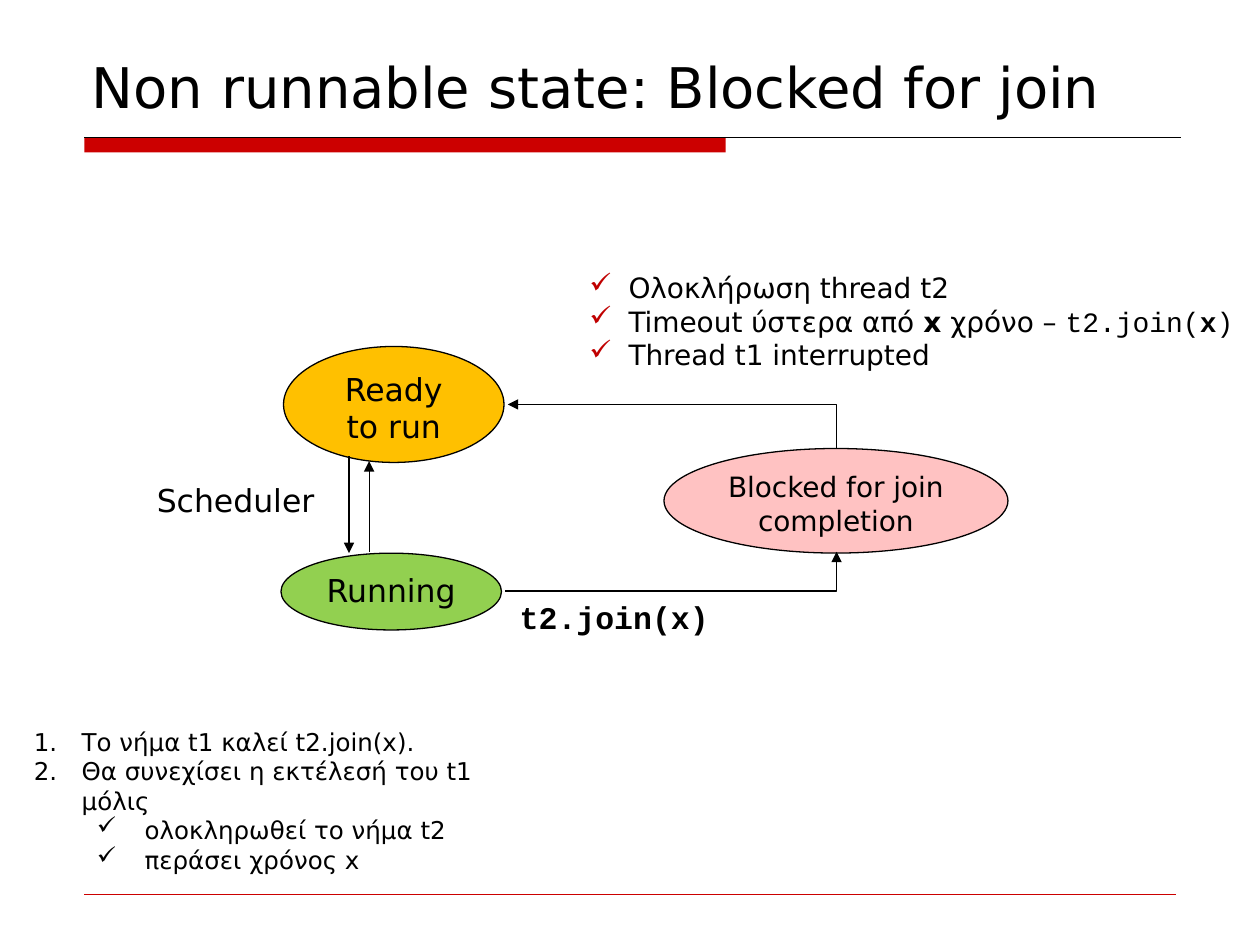
import pptx
import pptx.dml.color
import pptx.enum.shapes
import pptx.enum.text
import pptx.oxml
import pptx.oxml.ns
import pptx.util
from dataclasses import dataclass, field
from typing import Any

Inches = pptx.util.Inches
Pt = pptx.util.Pt
Align = pptx.enum.text.PP_ALIGN
Anchor = pptx.enum.text.MSO_ANCHOR
Kind = pptx.enum.shapes.MSO_SHAPE
Link = pptx.enum.shapes.MSO_CONNECTOR
SANS, MONO = "DejaVu Sans", "Courier New"
BLACK, RED = "000000", "CC0000"
CHECK = '<a:buChar {} char="✓"/>'
COUNT = '<a:buAutoNum {} type="arabicPeriod"/>'
TINT = '<a:buClr {}><a:srgbClr val="C00000"/></a:buClr>'


@dataclass
class Run:
    text: str
    look: dict[str, Any] = field(default_factory=dict)


@dataclass
class Para:
    runs: list[Run]
    marks: tuple[str, ...] = ()
    left: float = 0
    hang: float = 0
    level: int = 0
    align: Any = Align.LEFT


@dataclass
class Box:
    area: tuple[float, float, float, float]
    paras: list[Para]
    size: int
    wrap: bool = True
    anchor: Any = Anchor.TOP
    font: str = SANS
    bold: bool = False


@dataclass
class State:
    area: tuple[float, float, float, float]
    text: str
    fill: str
    size: int = 18


@dataclass
class Wire:
    start: tuple[float, float]
    end: tuple[float, float]
    arrow: str = ""
    bent: bool = False
    color: str = BLACK
    width: float = 0.75


def tint(code: str) -> pptx.dml.color.RGBColor:
    return pptx.dml.color.RGBColor.from_string(code)


def node(text: str) -> Any:
    return pptx.oxml.parse_xml(text.format(pptx.oxml.ns.nsdecls("a")))


def style(item: Any, look: dict[str, Any]) -> None:
    for key, value in look.items():
        setattr(item, key, value)


def write(frame: Any, box: Box) -> None:
    style(frame, {"word_wrap": box.wrap, "vertical_anchor": box.anchor})
    for spot, para in enumerate(box.paras):
        line = frame.add_paragraph() if spot else frame.paragraphs[0]
        style(line, {"alignment": para.align, "level": para.level})
        if para.marks:
            props = line._p.get_or_add_pPr()
            props.set("marL", str(Inches(para.left)))
            props.set("indent", str(-Inches(para.hang)))
            for mark in para.marks:
                props.append(node(mark))
        base = {"name": box.font, "size": Pt(box.size), "bold": box.bold}
        for part in para.runs:
            run = line.add_run()
            run.text = part.text
            style(run.font, base | part.look)
            run.font.color.rgb = tint(BLACK)


def place(slide: Any, box: Box) -> None:
    shape = slide.shapes.add_textbox(*map(Inches, box.area))
    write(shape.text_frame, box)


def solid(slide: Any, kind: Any, area: tuple, fill: str) -> Any:
    shape = slide.shapes.add_shape(kind, *map(Inches, area))
    shape.shadow.inherit = False
    shape.fill.solid()
    shape.fill.fore_color.rgb = tint(fill)
    return shape


def oval(slide: Any, state: State) -> None:
    shape = solid(slide, Kind.OVAL, state.area, state.fill)
    shape.line.color.rgb = tint(BLACK)
    shape.line.width = Pt(0.75)
    para = Para([Run(state.text)], align=Align.CENTER)
    write(shape.text_frame, Box(state.area, [para], state.size))


def join(slide: Any, wire: Wire) -> None:
    kind = Link.ELBOW if wire.bent else Link.STRAIGHT
    line = slide.shapes.add_connector(kind, *map(Inches, wire.start + wire.end))
    line.line.color.rgb = tint(wire.color)
    line.line.width = Pt(wire.width)
    props = line._element.spPr
    if wire.bent:
        props.find(pptx.oxml.ns.qn("a:prstGeom")).set("prst", "bentConnector2")
    if wire.arrow:
        line.line._get_or_add_ln().append(node(f'<a:{wire.arrow} {{}} type="triangle"/>'))
    props.append(node("<a:effectLst {}/>"))


def check(*runs: Run) -> Para:
    return Para(list(runs), (TINT, CHECK), 0.31, 0.31)


def step(text: str) -> Para:
    return Para([Run(text)], (COUNT,), 0.38, 0.38)


def sub(text: str) -> Para:
    return Para([Run(text)], (CHECK,), 0.88, 0.38, 1)


def label(text: str) -> list[Para]:
    return [Para([Run(text)], align=Align.CENTER)]


BOLD = {"bold": True}
CODE = {"name": MONO}
STATES = [
    State((2.25, 2.75, 1.75, 0.92), "Ready to run", "FFC000"),
    State((2.23, 4.39, 1.75, 0.61), "Running", "92D050"),
    State((5.27, 3.56, 2.73, 0.83), "Blocked for join completion", "FFC2C2", 16),
]
WIRES = [
    Wire((0.67, 1.09), (9.37, 1.09)),
    Wire((0.67, 7.1), (9.33, 7.1), color=RED, width=0.25),
    Wire((2.93, 4.38), (2.93, 3.66), "tailEnd"),
    Wire((2.77, 3.62), (2.77, 4.39), "tailEnd"),
    Wire((4.01, 4.69), (6.64, 4.38), "tailEnd", True),
    Wire((4.03, 3.21), (6.64, 3.56), "headEnd", True),
]
BOXES = [
    Box((0.63, 0.08, 8.75, 0.92), [Para([Run("Non runnable state: Blocked for join")])],
        32, anchor=Anchor.BOTTOM),
    Box((4.02, 4.7, 1.71, 0.4), label("t2.join(x)"), 18, False, font=MONO, bold=True),
    Box((1.14, 3.77, 1.46, 0.4), label("Scheduler"), 18, False),
    Box((4.58, 2.1, 6.08, 0.94), [
        check(Run("Ολοκλήρωση thread t2")),
        check(Run("Timeout ύστερα από "), Run("x", BOLD), Run(" χρόνο – "),
              Run("t2.join(", CODE), Run("x", CODE | BOLD), Run(")", CODE)),
        check(Run("Thread t1 interrupted")),
    ], 16),
    Box((0.17, 5.72, 4.24, 1.04), [
        step("Το νήμα t1 καλεί t2.join(x)."),
        step("Θα συνεχίσει η εκτέλεσή του t1 μόλις"),
        sub("ολοκληρωθεί το νήμα t2"),
        sub("περάσει χρόνος x"),
    ], 14),
]


def main() -> None:
    deck = pptx.Presentation()
    style(deck, {"slide_width": Inches(10), "slide_height": Inches(7.5)})
    slide = deck.slides.add_slide(deck.slide_layouts[6])
    bar = solid(slide, Kind.RECTANGLE, (0.67, 1.09, 5.09, 0.12), RED)
    bar.line.fill.background()
    for draw, items in ((oval, STATES), (join, WIRES), (place, BOXES)):
        for item in items:
            draw(slide, item)
    deck.save("out.pptx")


if __name__ == "__main__":
    main()
